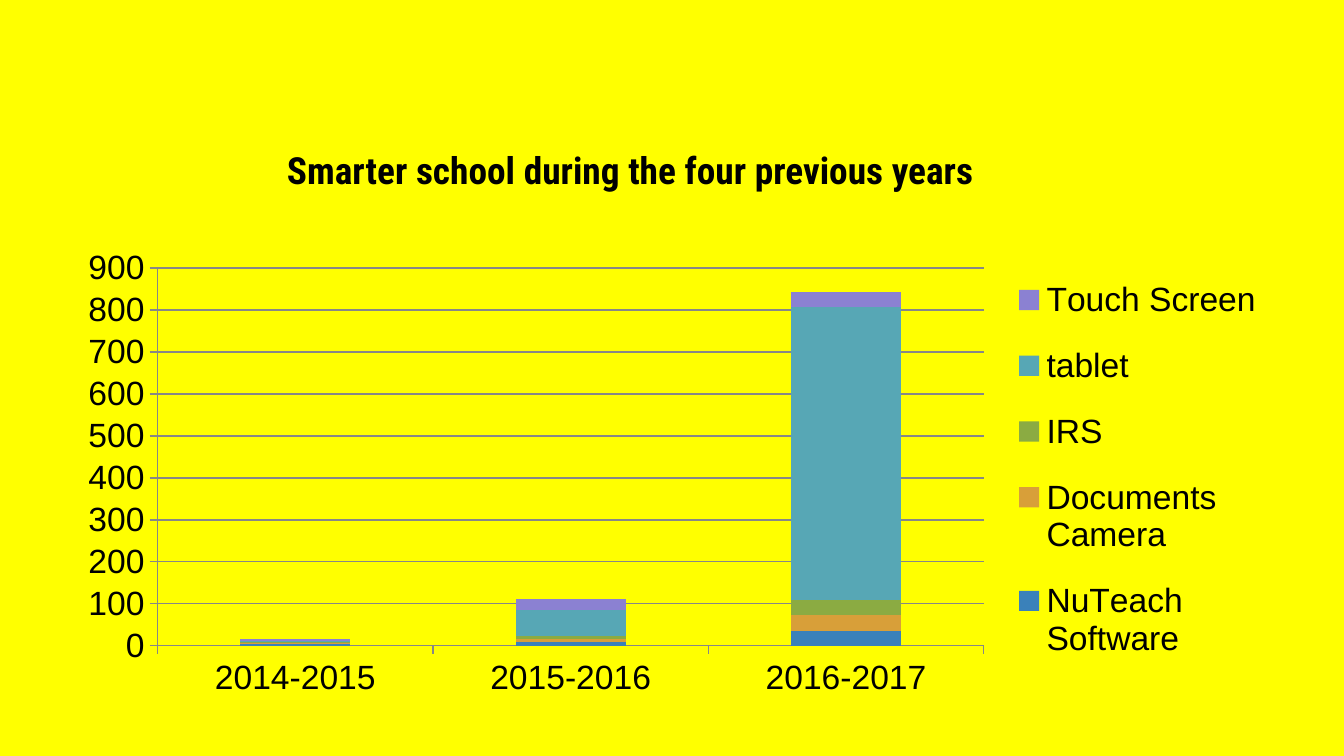
from lxml import etree
from pptx import Presentation
from pptx.chart.data import CategoryChartData
from pptx.dml.color import RGBColor
from pptx.enum import chart as ch, text
from pptx.oxml import ns
from pptx.util import Cm, Pt

YELLOW = RGBColor(0xFF, 0xFF, 0x00)
BLACK = RGBColor(0x00, 0x00, 0x00)
GRAY = RGBColor(0x87, 0x87, 0x87)
BLUE = RGBColor(0x3A, 0x81, 0xBA)
ORANGE = RGBColor(0xD8, 0x9F, 0x39)
GREEN = RGBColor(0x8B, 0xAB, 0x42)
TEAL = RGBColor(0x57, 0xA7, 0xB5)
PURPLE = RGBColor(0x8B, 0x81, 0xD2)

YEARS = ["2014-2015", "2015-2016", "2016-2017"]
EQUIPMENT = [
    ("NuTeach\nSoftware", (3, 8, 35), BLUE),
    ("Documents Camera", (3, 8, 38), ORANGE),
    ("IRS", (3, 6, 35), GREEN),
    ("tablet", (3, 62, 700), TEAL),
    ("Touch Screen", (3, 27, 36), PURPLE),
]


def format_font(font, name="Arial", size=18, color=BLACK, bold=False):
    font.name, font.size, font.bold = name, Pt(size), bold
    font.color.rgb = color


def add_text(slide, words, left, top, width, height,
             align=text.PP_ALIGN.CENTER, inset=Cm(0.25), **font_format):
    frame = slide.shapes.add_textbox(left, top, width, height).text_frame
    frame.word_wrap = True
    frame.margin_left = frame.margin_right = inset
    frame.margin_top = frame.margin_bottom = inset
    paragraph = frame.paragraphs[0]
    paragraph.alignment = align
    run = paragraph.add_run()
    run.text = words
    format_font(run.font, **font_format)


def make_layout(x, y, w, h, inner=False):
    """Manual chart layout, in fractions of the chart's size."""
    layout = etree.Element(ns.qn("c:layout"))
    manual = etree.SubElement(layout, ns.qn("c:manualLayout"))
    settings = [("layoutTarget", "inner")] if inner else []
    settings += [("xMode", "edge"), ("yMode", "edge"),
                 ("x", x), ("y", y), ("w", w), ("h", h)]
    for tag, value in settings:
        etree.SubElement(manual, ns.qn("c:" + tag)).set("val", str(value))
    return layout


def set_layout(parent, layout, index):
    for old in parent.findall(ns.qn("c:layout")):
        parent.remove(old)
    parent.insert(index, layout)


def style_axis(axis):
    axis.major_tick_mark = ch.XL_TICK_MARK.OUTSIDE
    axis.minor_tick_mark = ch.XL_TICK_MARK.NONE
    axis.format.line.color.rgb = GRAY
    format_font(axis.tick_labels.font)


def add_equipment_chart(slide, left, top, width, height):
    data = CategoryChartData()
    data.categories = YEARS
    for name, counts, _ in EQUIPMENT:
        data.add_series(name, counts)
    chart = slide.shapes.add_chart(
        ch.XL_CHART_TYPE.COLUMN_STACKED, left, top, width, height, data).chart
    chart.has_title = False
    format_font(chart.font)

    # Stacked columns
    columns = chart.plots[0]
    columns.gap_width, columns.overlap = 150, 100
    columns.vary_by_categories = False
    for series, (_, _, color) in zip(columns.series, EQUIPMENT):
        series.format.fill.solid()
        series.format.fill.fore_color.rgb = color

    # Axes and gridlines
    style_axis(chart.category_axis)
    counts_axis = chart.value_axis
    style_axis(counts_axis)
    counts_axis.minimum_scale, counts_axis.maximum_scale = 0, 900
    counts_axis.major_unit = 100
    counts_axis.has_major_gridlines = True
    counts_axis.major_gridlines.format.line.color.rgb = GRAY

    # Legend and plot area
    chart.has_legend = True
    chart.legend.position = ch.XL_LEGEND_POSITION.RIGHT
    chart.legend.include_in_layout = False
    format_font(chart.legend.font)
    set_layout(chart.legend._element, make_layout(0.78, 0.07, 0.21, 0.89), 1)
    plot_area = chart._chartSpace.chart.plotArea
    set_layout(plot_area, make_layout(0.082, 0.101, 0.677, 0.777, inner=True), 0)


def main():
    deck = Presentation()
    deck.slide_width, deck.slide_height = Cm(25.4), Cm(14.29)
    slide = deck.slides.add_slide(deck.slide_layouts[6])

    # Background
    slide.background.fill.solid()
    slide.background.fill.fore_color.rgb = YELLOW

    # Title
    add_text(slide, "Smarter school during the four previous years",
             Cm(1.12), Cm(2.54), Cm(21.59), Cm(1.19),
             name="Roboto Condensed", size=20, bold=True)

    # Equipment by school year
    add_equipment_chart(slide, Cm(1.09), Cm(4.14), Cm(23.06), Cm(9.19))
    deck.save("out.pptx")


if __name__ == "__main__":
    main()
